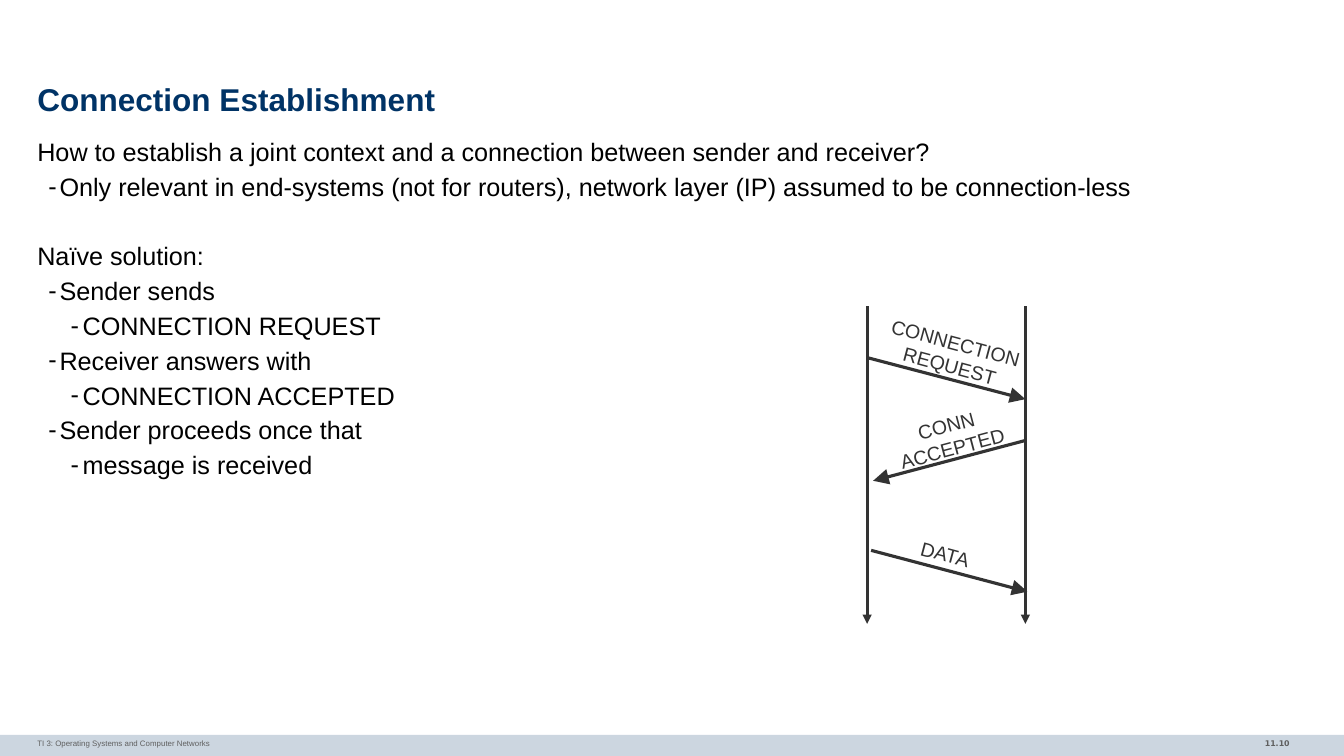
from lxml import etree
from pptx import Presentation
from pptx.enum import shapes, text
from pptx.oxml import ns
from pptx.util import Inches, Pt
from pptx.dml.color import RGBColor

COLORS = {
    "title": "003366",
    "body": "000000",
    "diagram": "333333",
    "footer": "5F5F5F",
    "bar": "CCD6E0",
}

# level, text, space before in points
BODY = [
    (0, "How to establish a joint context and a connection between sender and receiver?", 0),
    (1, "Only relevant in end-systems (not for routers), network layer (IP) "
        "assumed to be connection-less", 2.8),
    (0, "Naïve solution:", 27.5),
    (1, "Sender sends", 2.8),
    (2, "CONNECTION REQUEST", 2.8),
    (1, "Receiver answers with", 2.8),
    (2, "CONNECTION ACCEPTED", 2.8),
    (1, "Sender proceeds once that", 2.8),
    (2, "message is received", 2.8),
]
INDENTS = {0: (0, 0), 1: (0.22, -0.11), 2: (0.45, -0.12)}

SENDER_X, RECEIVER_X = 8.6, 10.17

# arrow start, arrow end, label, label place (left, top, width, height), rotation
MESSAGES = [
    ((8.61, 3.55), (10.17, 3.96), "CONNECTION\nREQUEST", (8.69, 3.23, 1.52, 0.57), 15),
    ((10.17, 4.37), (8.66, 4.77), "CONN\nACCEPTED", (8.78, 4.05, 1.27, 0.57), -15),
    ((8.64, 5.46), (10.19, 5.87), "DATA", (9.03, 5.33, 0.69, 0.34), 15),
]


def rgb(name):
    return RGBColor.from_string(COLORS[name])


def place(shape, left, top, width, height):
    shape.left, shape.top = Inches(left), Inches(top)
    shape.width, shape.height = Inches(width), Inches(height)


def set_frame(frame, margins=(0, 0, 0, 0), anchor=text.MSO_ANCHOR.TOP, wrap=True):
    """Set insets (left, top, right, bottom), anchor and wrapping."""
    frame.auto_size = text.MSO_AUTO_SIZE.NONE
    frame.word_wrap = wrap
    frame.vertical_anchor = anchor
    (frame.margin_left, frame.margin_top,
     frame.margin_right, frame.margin_bottom) = map(Inches, margins)


def write(para, content, size, color, font="Arial", bold=False,
          align=text.PP_ALIGN.LEFT, spacing=1.0, before=0):
    para.text = content
    para.alignment = align
    para.line_spacing = spacing
    para.space_before = Pt(before)
    for span in para.runs:
        span.font.name = font
        span.font.size = Pt(size)
        span.font.bold = bold
        span.font.color.rgb = rgb(color)


def set_bullet(para, level):
    """Set the indents of a list level, with a dash below the top level."""
    para.level = level
    margin, indent = INDENTS[level]
    props = para._p.get_or_add_pPr()
    props.set("marL", str(Inches(margin)))
    props.set("indent", str(Inches(indent)))
    if level:
        etree.SubElement(props, ns.qn("a:buChar")).set("char", "-")
    else:
        etree.SubElement(props, ns.qn("a:buNone"))


def add_label(page, spot, content, size, color, margins=(0, 0, 0, 0),
              wrap=True, rotation=0, **style):
    box = page.shapes.add_textbox(*map(Inches, spot))
    box.rotation = rotation
    set_frame(box.text_frame, margins, wrap=wrap)
    write(box.text_frame.paragraphs[0], content, size, color, **style)


def add_arrow(page, start, end, head):
    """Draw an arrow; head is the arrowhead size, med or lg."""
    arrow = page.shapes.add_connector(
        shapes.MSO_CONNECTOR.STRAIGHT, *map(Inches, start + end))
    arrow.line.color.rgb = rgb("diagram")
    arrow.line.width = Pt(2.25)
    tip = etree.SubElement(arrow.line._get_or_add_ln(), ns.qn("a:tailEnd"))
    for key, value in (("type", "triangle"), ("w", head), ("len", head)):
        tip.set(key, value)
    etree.SubElement(arrow._element.spPr, ns.qn("a:effectLst"))


def add_footer(page):
    bar = page.shapes.add_shape(
        shapes.MSO_SHAPE.RECTANGLE, *map(Inches, (0, 7.29, 13.33, 0.21)))
    bar.shadow.inherit = False
    bar.fill.solid()
    bar.fill.fore_color.rgb = rgb("bar")
    bar.line.fill.background()
    add_label(page, (11.1, 7.28, 1.79, 0.23), "11.10", 5.6, "footer",
              margins=(0.1, 0.05, 0.1, 0.05), font="DejaVu Sans", bold=True,
              align=text.PP_ALIGN.RIGHT)
    add_label(page, (0.37, 7.28, 8.72, 0.22),
              "TI 3: Operating Systems and Computer Networks", 5.6, "footer",
              margins=(0, 0.05, 0, 0.05))


def fill_title(title):
    place(title, 0.37, 0.78, 12.6, 0.47)
    set_frame(title.text_frame, anchor=text.MSO_ANCHOR.MIDDLE)
    write(title.text_frame.paragraphs[0], "Connection Establishment", 22.5,
          "title", bold=True, spacing=0.85)


def fill_body(body):
    place(body, 0.37, 1.35, 12.6, 5.74)
    frame = body.text_frame
    set_frame(frame)
    for number, (level, content, before) in enumerate(BODY):
        para = frame.add_paragraph() if number else frame.paragraphs[0]
        set_bullet(para, level)
        write(para, content, 18, "body", spacing=1.02, before=before)


def add_sequence_diagram(page):
    for x in (SENDER_X, RECEIVER_X):
        add_arrow(page, (x, 3.04), (x, 6.19), "med")
    for start, end, content, spot, rotation in MESSAGES:
        add_arrow(page, start, end, "lg")
        add_label(page, spot, content, 14, "diagram",
                  margins=(0.1, 0.05, 0.1, 0.05), wrap=False,
                  rotation=rotation, align=text.PP_ALIGN.CENTER)


def main():
    deck = Presentation()
    deck.slide_width, deck.slide_height = Inches(13.33), Inches(7.5)
    page = deck.slides.add_slide(deck.slide_layouts[1])
    add_footer(page)
    fill_title(page.shapes.title)
    fill_body(page.placeholders[1])
    add_sequence_diagram(page)
    deck.save("out.pptx")


if __name__ == "__main__":
    main()
